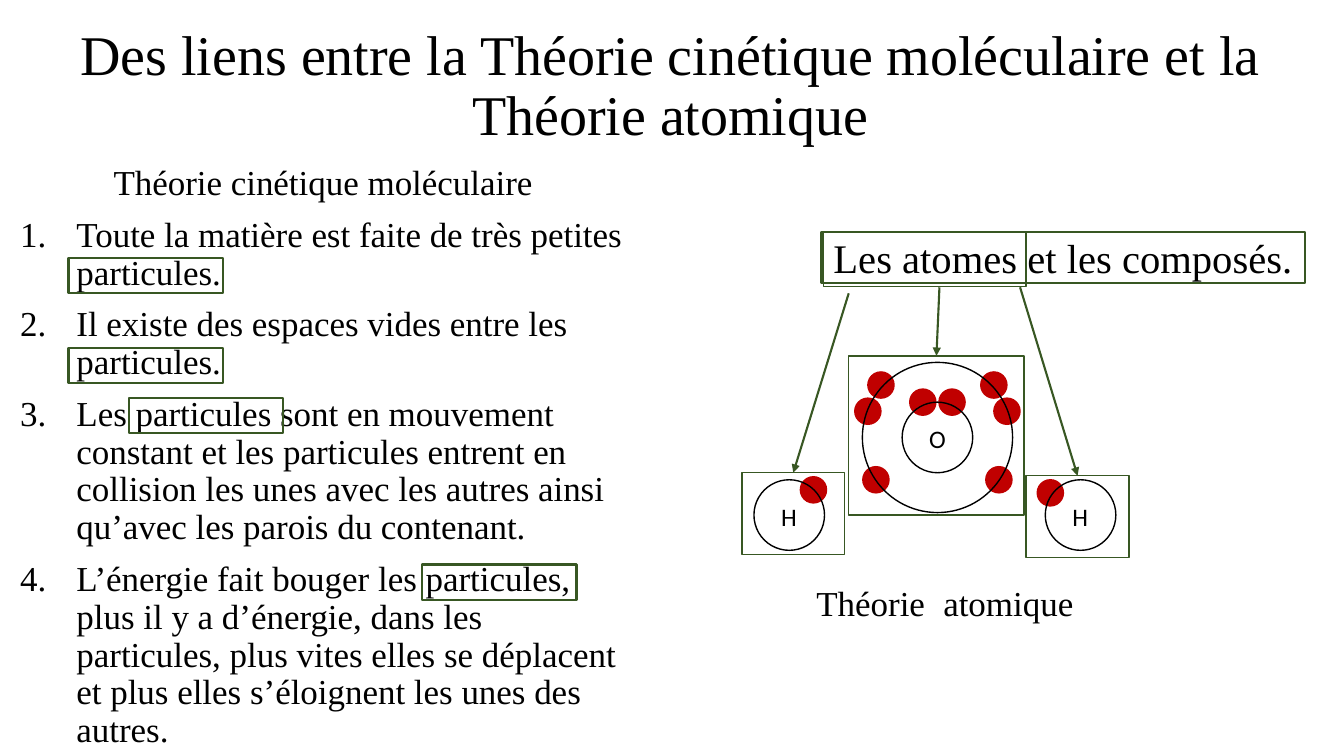
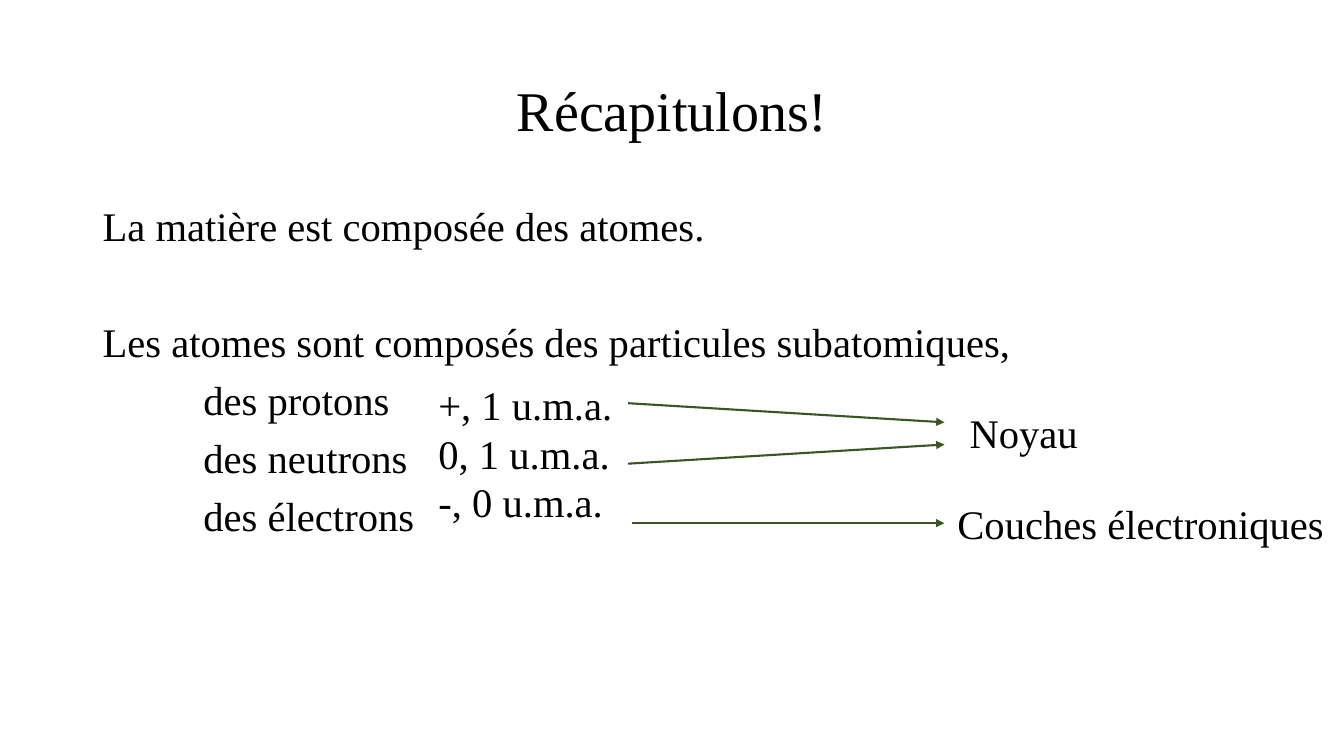
from dataclasses import dataclass
from typing import Optional

from lxml import etree
from pptx import Presentation, util as u
from pptx.dml.color import RGBColor
from pptx.enum import shapes as es, text as et
from pptx.oxml.ns import qn

INK = {"text": "000000", "frame": "385723", "dot": "C00000", "paper": "FFFFFF"}
SERIF, SANS = "Times New Roman", "Calibri"
CELL = 0.1  # side of one grid cell, in inches
COLS, ROWS = 133.33, 75
BODY, LABEL = 25, 29
DOT, CORE = 2.6, 7.0
RECT, OVAL = es.MSO_SHAPE.RECTANGLE, es.MSO_SHAPE.OVAL
LEFT, MID = et.PP_ALIGN.LEFT, et.PP_ALIGN.CENTER


@dataclass
class Box:
    x: float
    y: float
    w: float
    h: float


@dataclass
class Para:
    words: str
    align: int = LEFT
    before: float = 0
    line: float = 1.0
    left: float = 0
    number: bool = False


@dataclass
class Atom:
    name: str
    x: float
    y: float
    frame: Box
    dots: list
    start: tuple
    shell: float = 0


def span(cells: float) -> int:
    return u.Inches(cells * CELL)


def place(box: Box) -> list:
    return [span(n) for n in (box.x, box.y, box.w, box.h)]


def around(x: float, y: float, size: float) -> Box:
    """Square box centred on a point."""
    return Box(x - size / 2, y - size / 2, size, size)


def tint(name: str) -> RGBColor:
    return RGBColor.from_string(INK[name])


def setall(item, style: dict) -> None:
    for key, val in style.items():
        setattr(item, key, val)


def write(slide, box: Box, paras: list, size: float, font: str = SERIF,
          wrap: bool = False, anchor=et.MSO_ANCHOR.TOP) -> None:
    frame = slide.shapes.add_textbox(*place(box)).text_frame
    fit = et.MSO_AUTO_SIZE
    setall(frame, {"word_wrap": wrap, "vertical_anchor": anchor,
                   "auto_size": fit.NONE if wrap else fit.SHAPE_TO_FIT_TEXT})
    for i, item in enumerate(paras):
        para = frame.paragraphs[0] if i == 0 else frame.add_paragraph()
        setall(para, {"alignment": item.align, "line_spacing": item.line,
                      "space_before": u.Pt(item.before)})
        props = para._p.get_or_add_pPr()
        if item.left:
            props.set("marL", str(span(item.left)))
        if item.number:
            props.set("indent", str(-span(item.left)))
            etree.SubElement(props, qn("a:buAutoNum"), type="arabicPeriod")
        run = para.add_run()
        run.text = item.words
        setall(run.font, {"name": font, "size": u.Pt(size)})
        run.font.color.rgb = tint("text")


def title(slide, box: Box, words: str) -> None:
    write(slide, box, [Para(words, MID, line=0.9)], 40, wrap=True,
          anchor=et.MSO_ANCHOR.MIDDLE)


def draw(slide, kind, box: Box, line: str, width: float = 1,
         fill: Optional[str] = None):
    shape = slide.shapes.add_shape(kind, *place(box))
    shape.shadow.inherit = False
    if fill:
        shape.fill.solid()
        shape.fill.fore_color.rgb = tint(fill)
    else:
        shape.fill.background()
    shape.line.color.rgb = tint(line)
    shape.line.width = u.Pt(width)
    return shape


def arrow(slide, start: tuple, end: tuple, goal=None) -> None:
    """Arrow to a point, joined to the top of goal when there is one."""
    line = slide.shapes.add_connector(
        es.MSO_CONNECTOR.STRAIGHT, *[span(n) for n in start + end])
    if goal is not None:
        line.end_connect(goal, 0)
    line.line.color.rgb = tint("frame")
    line.line.width = u.Pt(1.5)
    etree.SubElement(line.line._get_or_add_ln(), qn("a:tailEnd"), type="triangle")
    etree.SubElement(line._element.spPr, qn("a:effectLst"))


def model(slide, atom: Atom) -> None:
    """Atom with its symbol, electrons, rings, frame and arrow."""
    x, y, box = atom.x, atom.y, atom.frame
    write(slide, Box(x - 1.8, y - 1.9, 3.6, 4), [Para(atom.name)], 18, SANS)
    for dx, dy in atom.dots:
        draw(slide, OVAL, around(x + dx, y + dy, DOT), "dot", fill="dot")
    for size in filter(None, (CORE, atom.shell)):
        draw(slide, OVAL, around(x, y, size), "text")
    goal = draw(slide, RECT, box, "frame")
    arrow(slide, atom.start, (box.x + box.w / 2, box.y), goal)


def links(slide) -> None:
    draw(slide, RECT, Box(81.7, 23, 20.1, 5.4), "frame", fill="paper")
    title(slide, Box(1, 1.4, 131, 14.5),
          "Des liens entre la Théorie cinétique moléculaire et la Théorie atomique")
    rules = [
        "Toute la matière est faite de très petites particules.",
        "Il existe des espaces vides entre les particules.",
        "Les particules sont en mouvement constant et les particules entrent en "
        "collision les unes avec les autres ainsi qu’avec les parois du contenant.",
        "L’énergie fait bouger les particules, plus il y a d’énergie, dans les "
        "particules, plus vites elles se déplacent et plus elles s’éloignent les "
        "unes des autres.",
    ]
    head = Para("Théorie cinétique moléculaire", MID, line=0.9)
    write(slide, Box(1, 15.9, 62.1, 51.6),
          [head] + [Para(r, before=10, line=0.9, left=5.6, number=True) for r in rules],
          BODY, wrap=True)
    for x, y in ((6.8, 25.6), (6.8, 34.5), (12.8, 39.5), (41.9, 56)):
        draw(slide, RECT, Box(x, y, 15.3, 3.5), "frame", 1.5)

    write(slide, Box(81.7, 22.6, 47.9, 5.9), [Para("Les atomes et les composés.")], LABEL)
    draw(slide, RECT, Box(81.5, 23, 48, 5.1), "frame", 1.5)
    for x, w, word in ((80, 12.9, "Théorie"), (92.6, 15.7, "atomique")):
        write(slide, Box(x, 57.2, w, 5.2), [Para(word)], BODY)

    pairs = ((1.45, -3.5), (6.1, 4.2), (6.9, -2.6), (5.6, -5.2))
    ring = [(side * dx, dy) for dx, dy in pairs for side in (-1, 1)]
    for atom in (
        Atom("H", 78.3, 51.1, Box(73.6, 46.9, 10.2, 8.1), [(2.4, -2.5)], (84.2, 29.1)),
        Atom("O", 93, 43.4, Box(84.2, 35.3, 17.4, 15.8), ring, (93.2, 28.5), 14.9),
        Atom("H", 107.2, 51.1, Box(101.8, 47.2, 10.2, 8.1), [(-3, -2.2)], (101.2, 28.5)),
    ):
        model(slide, atom)


def recap(slide) -> None:
    title(slide, Box(9.2, 4, 115, 14.5), "Récapitulons!")
    parts = [Para(f"des {p}", before=10, line=0.9, left=10)
             for p in ("protons", "neutrons", "électrons")]
    write(slide, Box(9.2, 20, 115, 36.8), [
        Para("La matière est composée des atomes.", line=0.9),
        Para("Les atomes sont composés des particules subatomiques,",
             before=51.4, line=0.9), *parts], LABEL, wrap=True)
    for start, end in (((62.3, 40), (93.7, 41.9)), ((62.3, 46), (93.7, 44.1)),
                       ((62.7, 51.9), (93.7, 51.9))):
        arrow(slide, start, end)
    for box, rows in (
        (Box(95.2, 40, 12.9, 5.9), ["Noyau"]),
        (Box(94, 49, 39.3, 5.9), ["Couches électroniques"]),
        (Box(42.5, 37.2, 19.4, 15.7), ["+, 1 u.m.a.", "0, 1 u.m.a.", "-, 0 u.m.a."]),
    ):
        write(slide, box, [Para(row) for row in rows], LABEL)


def main() -> None:
    deck = Presentation()
    setall(deck, {"slide_width": span(COLS), "slide_height": span(ROWS)})
    for build in (links, recap):
        build(deck.slides.add_slide(deck.slide_layouts[6]))
    deck.save("out.pptx")


if __name__ == "__main__":
    main()
